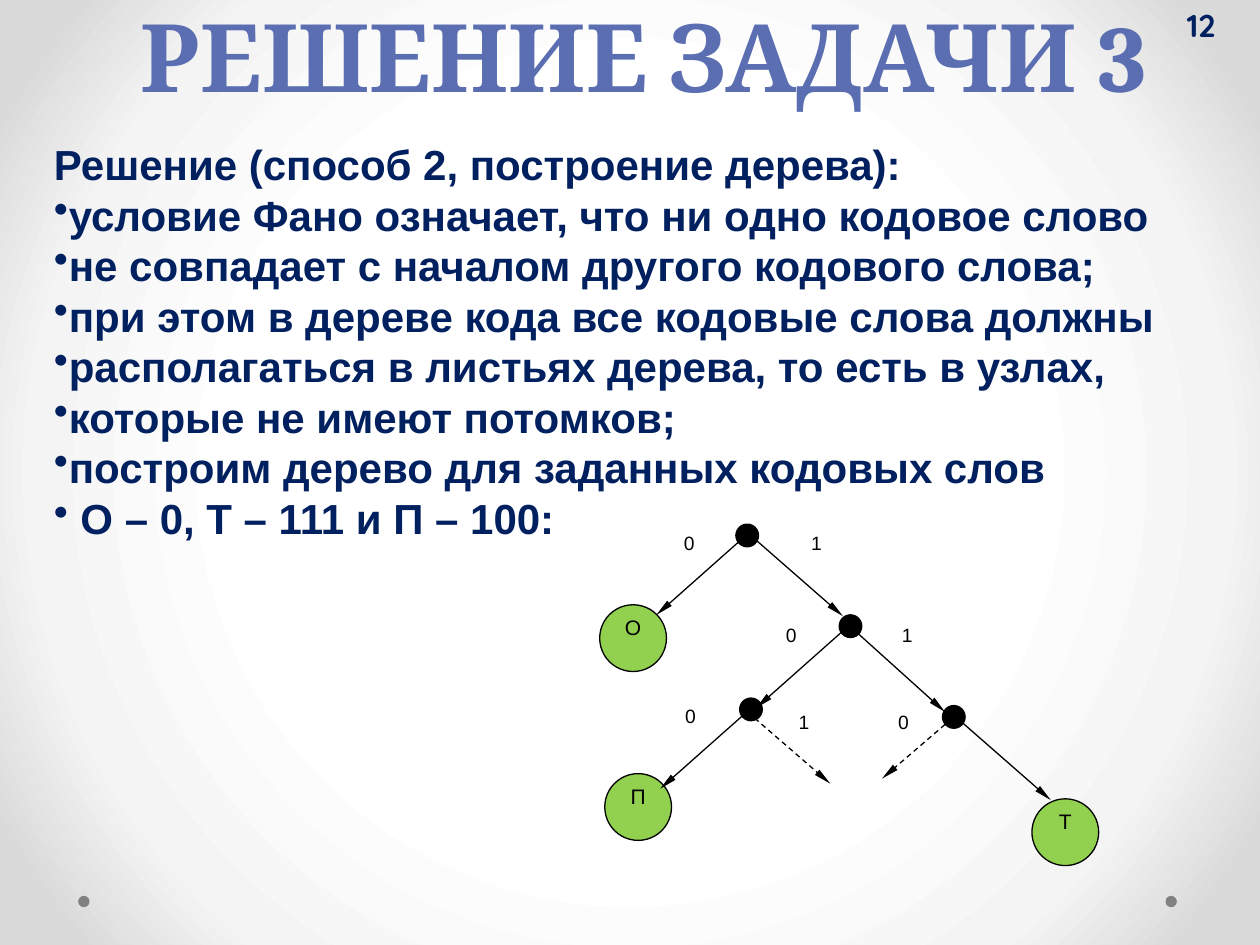
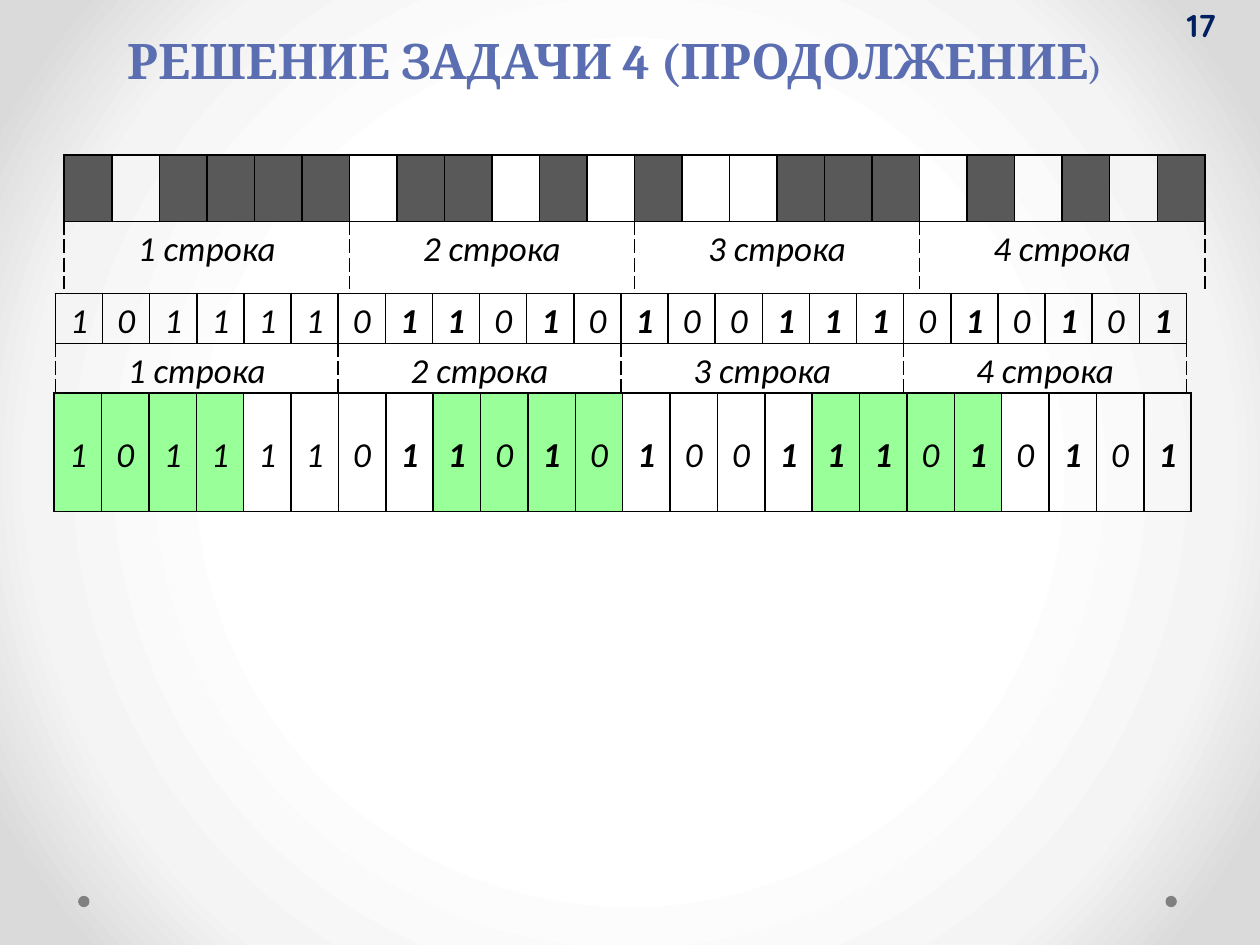
from dataclasses import dataclass

from pptx import Presentation
from pptx.dml.color import RGBColor
from pptx.enum.dml import MSO_LINE
from pptx.enum.shapes import MSO_CONNECTOR, MSO_SHAPE
from pptx.enum.text import MSO_ANCHOR, PP_ALIGN
from pptx.oxml import parse_xml
from pptx.oxml.ns import nsdecls, qn
from pptx.util import Inches, Pt


@dataclass(frozen=True)
class Theme:
    """Hold the colours, fonts and type sizes that the slides share."""

    ink: str = "000000"
    navy: str = "002060"
    dot: str = "808080"
    leaf: str = "92D050"
    dark_cell: str = "595959"
    marked_cell: str = "99FF99"
    backdrop: tuple = ((50, "FFFFFF"), (76, "F4F4F4"), (92, "DADADA"))
    title_fade: tuple = ((0, "7D8BC0"), (49, "5A6EB1"), (50, "455DA0"),
                         (92, "41548B"), (100, "405389"))
    backdrop_direction: str = (
        '<a:path path="circle"><a:fillToRect l="50000" t="50000" '
        'r="50000" b="50000"/></a:path>')
    title_direction: str = '<a:lin ang="5400000" scaled="0"/>'
    plain_table: str = "{2D5ABB26-0587-4C30-8999-92F81FD0307C}"
    line_width: float = 0.75
    border_width: int = 1
    body_leading: float = 28.85
    title_leading: int = 58


THEME = Theme()
BODY = {"name": "Arial", "size": Pt(24), "bold": True}
NUMBER = {"name": "Quicksand", "size": Pt(18), "bold": True}
BIG_TITLE = {"name": "Cambria", "size": Pt(54), "bold": True}
TITLE = {**BIG_TITLE, "size": Pt(28)}
TITLE_END = {**BIG_TITLE, "size": Pt(18)}
LEAF = {"name": "Arial", "size": Pt(12)}
EDGE_LABEL = {"name": "Arial", "size": Pt(11)}
CELL = {"name": "Calibri", "size": Pt(20), "italic": True}
TOP = {"vertical_anchor": MSO_ANCHOR.TOP, "word_wrap": True}
MIDDLE = {**TOP, "vertical_anchor": MSO_ANCHOR.MIDDLE}
NO_INSETS = {f"margin_{side}": 0 for side in ("left", "top", "right", "bottom")}
CELL_INSETS = {**NO_INSETS, "margin_left": Inches(0.07), "margin_right": Inches(0.07)}
CENTERED = {"alignment": PP_ALIGN.CENTER}

SOLUTION_STEPS = (
    "условие Фано означает, что ни одно кодовое слово",
    "не совпадает с началом другого кодового слова;",
    "при этом в дереве кода все кодовые слова должны",
    "располагаться в листьях дерева, то есть в узлах,",
    "которые не имеют потомков;",
    "построим дерево для заданных кодовых слов",
    " О – 0, Т – 111 и П – 100:",
)
INNER_NODES = ((5.84, 4.16), (6.66, 4.88), (5.87, 5.54), (7.48, 5.6))
LEAVES = (("О", 4.76, 4.8), ("П", 4.8, 6.14), ("Т", 8.19, 6.34))
EDGES = (
    (5.92, 4.25, 5.21, 4.88), (5.97, 4.26, 6.69, 4.89),
    (6.71, 4.99, 6, 5.62), (6.79, 5.01, 7.5, 5.65),
    (5.95, 5.63, 5.24, 6.26), (7.62, 5.72, 8.34, 6.35),
)
UNUSED_EDGES = ((5.99, 5.7, 6.59, 6.22), (7.5, 5.75, 7, 6.18))
EDGE_LABELS = (
    ("0", 5.28, 4.22), ("1", 6.29, 4.22), ("0", 6.09, 4.95), ("1", 7.01, 4.95),
    ("0", 5.29, 5.59), ("1", 6.19, 5.64), ("0", 6.98, 5.64),
)
BITS = "101111011010100111010101"
BITS_PER_ROW = 6
FIRST_BOLD_BIT = 7


def set_values(target, values):
    """Set each attribute of the target from a dict."""
    for name, value in values.items():
        setattr(target, name, value)


def set_gradient(fill, element, stops, direction):
    """Give a fill, found inside the element, gradient stops and a direction."""
    fill.gradient()
    gradient = element.find(".//" + qn("a:gradFill"))
    stop_xml = "".join(
        f'<a:gs pos="{position * 1000}"><a:srgbClr val="{color}"/></a:gs>'
        for position, color in stops)
    gradient.getparent().replace(gradient, parse_xml(
        f'<a:gradFill {nsdecls("a")} rotWithShape="1">'
        f"<a:gsLst>{stop_xml}</a:gsLst>{direction}</a:gradFill>"))


def add_span(para, text, style, color=THEME.ink):
    """Add a run of text; a colour of None gives the title gradient."""
    span = para.add_run()
    span.text = text
    set_values(span.font, style)
    if color is None:
        set_gradient(span.font.fill, span._r, THEME.title_fade, THEME.title_direction)
    else:
        span.font.color.rgb = RGBColor.from_string(color)


def add_box(page, place, frame_values):
    """Add an empty text box and return its text frame."""
    box = page.shapes.add_textbox(*map(Inches, place))
    set_values(box.text_frame, frame_values)
    return box.text_frame


def add_circle(page, left, top, size, color, outlined=True):
    """Add a filled circle."""
    circle = page.shapes.add_shape(MSO_SHAPE.OVAL, *map(Inches, (left, top, size, size)))
    circle.shadow.inherit = False
    circle.fill.solid()
    circle.fill.fore_color.rgb = RGBColor.from_string(color)
    if outlined:
        circle.line.color.rgb = RGBColor.from_string(THEME.ink)
        circle.line.width = Pt(THEME.line_width)
    else:
        circle.line.fill.background()
    return circle


def add_page(deck, number):
    """Add a slide with the shared backdrop, footer dots and page number."""
    page = deck.slides.add_slide(deck.slide_layouts[6])
    set_gradient(page.background.fill, page.element, THEME.backdrop, THEME.backdrop_direction)
    for left in (0.62, 9.25):
        add_circle(page, left, 7.11, 0.09, THEME.dot, outlined=False)
    frame = add_box(page, (9.39, 0, 0.61, 0.4), {
        **MIDDLE, "margin_left": Inches(0.03), "margin_right": Inches(0.05)})
    add_span(frame.paragraphs[0], number, NUMBER, THEME.navy)
    return page


def add_solution(page):
    """Add the heading and the bulleted steps of the solution."""
    frame = add_box(page, (0.33, 1.03, 9.51, 3.8), {**TOP, "margin_top": Inches(0.07)})
    para = frame.paragraphs[0]
    add_span(para, "Решение (способ 2, построение дерева):", BODY, THEME.navy)
    para.line_spacing = Pt(THEME.body_leading)
    for step in SOLUTION_STEPS:
        para = frame.add_paragraph()
        para.line_spacing = Pt(THEME.body_leading)
        bullet = parse_xml(f'<a:buChar {nsdecls("a")} char="•"/>')
        para._p.get_or_add_pPr().append(bullet)
        add_span(para, step, BODY, THEME.navy)


def add_arrow(page, ends, dashed=False):
    """Add a tree edge with an arrowhead at its lower end."""
    arrow = page.shapes.add_connector(MSO_CONNECTOR.STRAIGHT, *map(Inches, ends))
    arrow.line.color.rgb = RGBColor.from_string(THEME.ink)
    arrow.line.width = Pt(THEME.line_width)
    if dashed:
        arrow.line.dash_style = MSO_LINE.DASH
    arrow.element.find(".//" + qn("a:ln")).append(parse_xml(
        f'<a:tailEnd {nsdecls("a")} type="triangle" w="sm" len="lg"/>'))
    arrow.element.spPr.append(parse_xml(f'<a:effectLst {nsdecls("a")}/>'))


def add_tree(page):
    """Draw the code tree with its nodes, edges and labels."""
    for left, top in INNER_NODES:
        add_circle(page, left, top, 0.18, THEME.ink)
    for letter, left, top in LEAVES:
        frame = add_circle(page, left, top, 0.53, THEME.leaf).text_frame
        set_values(frame, {**TOP, **NO_INSETS})
        set_values(frame.paragraphs[0], CENTERED)
        add_span(frame.paragraphs[0], letter, LEAF)
    for ends in EDGES:
        add_arrow(page, ends)
    for ends in UNUSED_EDGES:
        add_arrow(page, ends, dashed=True)
    for digit, left, top in EDGE_LABELS:
        frame = add_box(page, (left, top, 0.38, 0.37), {**TOP, **NO_INSETS})
        set_values(frame.paragraphs[0], CENTERED)
        add_span(frame.paragraphs[0], digit, EDGE_LABEL)


def format_cell(cell, borders, color=None, anchor=MSO_ANCHOR.MIDDLE):
    """Set the insets, borders and fill of a table cell."""
    set_values(cell, {**CELL_INSETS, "vertical_anchor": anchor})
    properties = cell._tc.get_or_add_tcPr()
    for side, dash in borders.items():
        properties.append(parse_xml(
            f'<a:ln{side} {nsdecls("a")} w="{Pt(THEME.border_width)}"><a:solidFill>'
            f'<a:srgbClr val="{THEME.ink}"/></a:solidFill>'
            f'<a:prstDash val="{dash}"/></a:ln{side}>'))
    if color:
        cell.fill.solid()
        cell.fill.fore_color.rgb = RGBColor.from_string(color)
    else:
        cell.fill.background()


def write_cell(cell, text, bold=False):
    """Write centred text in a table cell."""
    para = cell.text_frame.paragraphs[0]
    set_values(para, {**CENTERED, "line_spacing": 1.15})
    add_span(para, text, {**CELL, "bold": bold})


def add_row_labels(table):
    """Merge the second table row into one label for each row of bits."""
    for start in range(0, len(BITS), BITS_PER_ROW):
        cell = table.cell(1, start)
        cell.merge(table.cell(1, start + BITS_PER_ROW - 1))
        format_cell(cell, {"L": "dash", "R": "dash", "T": "solid"}, anchor=MSO_ANCHOR.TOP)
        write_cell(cell, f"{start // BITS_PER_ROW + 1} строка")


def add_bit_table(page, place, colors, digits=True, labels=True):
    """Add a table with one column per bit and optional row labels."""
    left, top, width, height = place
    row_count = 2 if labels else 1
    table = page.shapes.add_table(
        row_count, len(BITS), *map(Inches, (left, top, width, height))).table
    set_values(table, {"first_row": False, "horz_banding": False})
    table._tbl.tblPr.find(qn("a:tableStyleId")).text = THEME.plain_table
    for column in table.columns:
        column.width = Inches(width / len(BITS))
    for row in table.rows:
        row.height = Inches(height / row_count)
    for index, (bit, color) in enumerate(zip(BITS, colors)):
        cell = table.cell(0, index)
        format_cell(cell, dict.fromkeys("LRTB", "solid"), color)
        if digits:
            write_cell(cell, bit, bold=bit == "1" and index >= FIRST_BOLD_BIT)
    if labels:
        add_row_labels(table)


def build_tree_page(deck):
    """Build the slide that solves task 3 with a tree."""
    page = add_page(deck, "12")
    add_tree(page)
    add_solution(page)
    para = add_box(page, (0.96, 0.03, 8.29, 0.99), TOP).paragraphs[0]
    set_values(para, {**CENTERED, "line_spacing": Pt(THEME.title_leading)})
    add_span(para, "РЕШЕНИЕ ЗАДАЧИ 3", BIG_TITLE, None)


def build_bits_page(deck):
    """Build the slide that turns the coloured cells into bits for task 4."""
    page = add_page(deck, "17")
    pixels = [THEME.dark_cell if bit == "1" else None for bit in BITS]
    blank = [None] * len(BITS)
    quartets = [None if index // 4 % 2 else THEME.marked_cell for index in range(len(BITS))]
    add_bit_table(page, (0.51, 1.23, 9.06, 1.06), pixels, digits=False)
    add_bit_table(page, (0.44, 2.33, 8.98, 0.79), blank)
    add_bit_table(page, (0.43, 3.12, 9.03, 0.94), quartets, labels=False)
    para = add_box(page, (0.91, 0.19, 8.12, 0.57), TOP).paragraphs[0]
    add_span(para, "РЕШЕНИЕ ЗАДАЧИ 4 (ПРОДОЛЖЕНИЕ", TITLE, None)
    add_span(para, ")", TITLE_END, None)


def main():
    """Build both slides and save the deck."""
    deck = Presentation()
    set_values(deck, {"slide_width": Inches(10), "slide_height": Inches(7.5)})
    build_tree_page(deck)
    build_bits_page(deck)
    deck.save("out.pptx")


if __name__ == "__main__":
    main()
